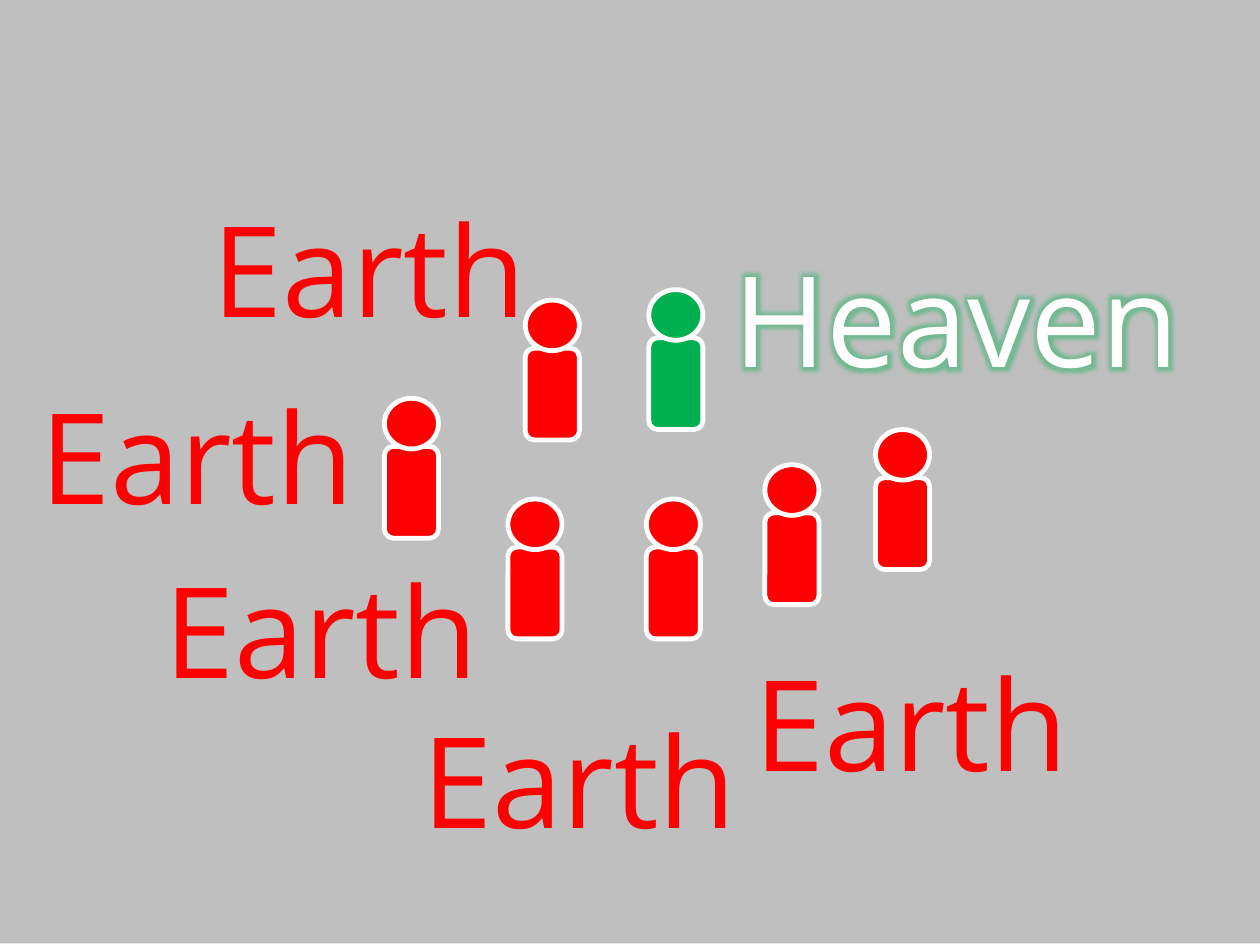
"""Build a slide of one green and six red figures among Earth and Heaven labels."""
import lxml.etree
import pptx
import pptx.dml.color
import pptx.enum.shapes
import pptx.enum.text
import pptx.oxml.ns
import pptx.util

Cm = pptx.util.Cm
SHAPE = pptx.enum.shapes.MSO_SHAPE
RED, GREEN, WHITE, GREY = "FF0000", "00B050", "FFFFFF", "BFBFBF"


def rgb(value):
    return pptx.dml.color.RGBColor.from_string(value)


def add_block(shapes, kind, box, fill):
    s = shapes.add_shape(kind, *map(Cm, box))
    s.shadow.inherit = False
    s.fill.solid()
    s.fill.fore_color.rgb = rgb(fill)
    return s


prs = pptx.Presentation()
prs.slide_width, prs.slide_height = Cm(25.4), Cm(19.05)
slide = prs.slides.add_slide(prs.slide_layouts[6])
backdrop = add_block(slide.shapes, SHAPE.RECTANGLE, (0, -0.03, 25.4, 19.05), GREY)
backdrop.line.fill.background()

frame_format = {
    "word_wrap": True,
    "auto_size": pptx.enum.text.MSO_AUTO_SIZE.SHAPE_TO_FIT_TEXT,
    "vertical_anchor": pptx.enum.text.MSO_ANCHOR.MIDDLE,
}
font_format = {"name": "Open Sans", "size": pptx.util.Pt(72)}
labels = [
    ("Earth", 2.21, 3.73, 10.46, RED),
    ("Heaven", 14.05, 4.72, 10.46, WHITE),
    ("Earth", 1.24, 11, 10.46, RED),
    ("Earth", 13.13, 12.88, 10.46, RED),
    ("Earth", 6.45, 14.02, 10.46, RED),
    ("Earth", 0.43, 7.49, 7.09, RED),
]
for text, left, top, width, color in labels:
    tf = slide.shapes.add_textbox(Cm(left), Cm(top), Cm(width), Cm(3.33)).text_frame
    for name, value in frame_format.items():
        setattr(tf, name, value)
    p = tf.paragraphs[0]
    p.alignment = pptx.enum.text.PP_ALIGN.CENTER
    r = p.add_run()
    r.text = text
    for name, value in font_format.items():
        setattr(r.font, name, value)
    r.font.color.rgb = rgb(color)
    if text == "Heaven":
        qn = pptx.oxml.ns.qn
        effects = lxml.etree.Element(qn("a:effectLst"))
        glow = lxml.etree.SubElement(effects, qn("a:glow"), rad=str(Cm(0.28)))
        tint = lxml.etree.SubElement(glow, qn("a:srgbClr"), val=GREEN)
        lxml.etree.SubElement(tint, qn("a:alpha"), val="40000")
        r.font._element.find(qn("a:solidFill")).addnext(effects)

people = [
    (13.08, 5.84, GREEN),
    (10.59, 6.05, RED),
    (7.75, 8.03, RED),
    (10.24, 10.06, RED),
    (13.03, 10.06, RED),
    (15.42, 9.37, RED),
    (17.65, 8.66, RED),
]
body_parts = [(SHAPE.ROUNDED_RECTANGLE, 0.97, 1.85), (SHAPE.OVAL, 0, 1.02)]
for left, top, color in people:
    person = slide.shapes.add_group_shape()
    for kind, drop, height in body_parts:
        s = add_block(person.shapes, kind, (left, top + drop, 1.09, height), color)
        s.line.color.rgb = rgb(WHITE)
        s.line.width = pptx.util.Pt(2.75)

prs.save("out.pptx")
